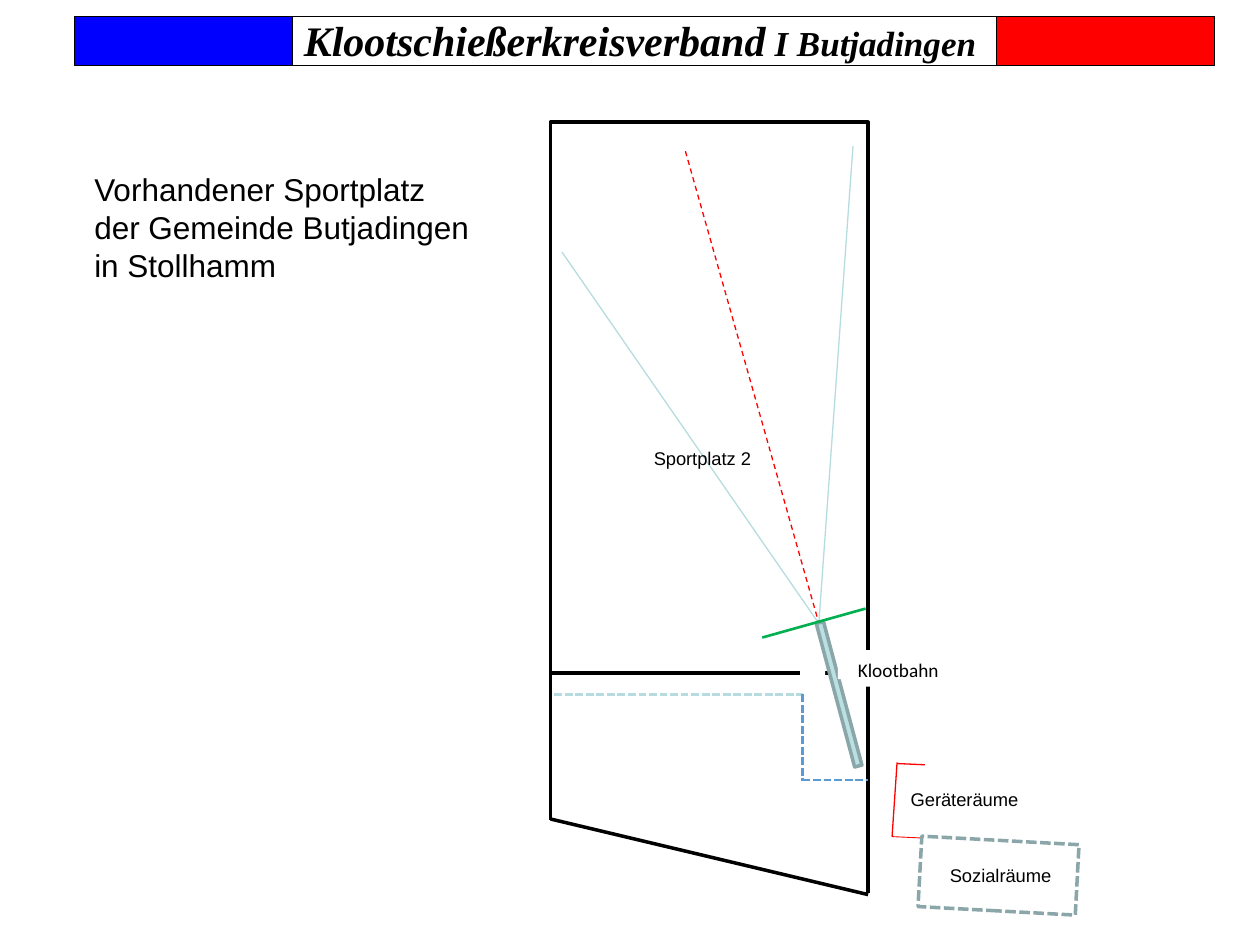
"""Build the slide showing the Stollhamm sports ground with its throwing track."""
from lxml import etree
from pptx import Presentation
from pptx.dml.color import RGBColor
from pptx.enum.dml import MSO_LINE
from pptx.enum.shapes import MSO_CONNECTOR, MSO_SHAPE
from pptx.enum.text import MSO_ANCHOR, MSO_AUTO_SIZE, PP_ALIGN
from pptx.oxml.ns import qn
from pptx.util import Inches, Pt

STRAIGHT = MSO_CONNECTOR.STRAIGHT
RECTANGLE = MSO_SHAPE.RECTANGLE
DASH = MSO_LINE.DASH
SHORT_DASH = MSO_LINE.SQUARE_DOT

COLORS = {
    "black": "000000", "white": "FFFFFF", "blue": "0000FF", "red": "FF0000",
    "sector": "B6DCDF", "track": "BBE0E3", "track_edge": "8AA6A8",
    "foul_line": "00B050", "path": "5B9BD5",
}


def add_line(start, end, color, width, dash=None):
    """Draw a straight line without shadow."""
    points = [Inches(value) for value in (*start, *end)]
    connector = slide.shapes.add_connector(STRAIGHT, *points)
    connector.line.color.rgb = RGBColor.from_string(COLORS[color])
    connector.line.width = Pt(width)
    if dash:
        connector.line.dash_style = dash
    etree.SubElement(connector._element.spPr, qn("a:effectLst"))


def add_rectangle(box, fill=None, line=None, width=0.75, rotation=0):
    """Draw a rectangle with optional fill and outline."""
    shape = slide.shapes.add_shape(RECTANGLE, *[Inches(value) for value in box])
    shape.shadow.inherit = False
    shape.rotation = rotation
    if fill:
        shape.fill.solid()
        shape.fill.fore_color.rgb = RGBColor.from_string(COLORS[fill])
    else:
        shape.fill.background()
    if line:
        shape.line.color.rgb = RGBColor.from_string(COLORS[line])
        shape.line.width = Pt(width)
    else:
        shape.line.fill.background()
    return shape


presentation = Presentation()
presentation.slide_width = Inches(10)
presentation.slide_height = Inches(7.5)
slide = presentation.slides.add_slide(presentation.slide_layouts[5])

title = slide.shapes.title
title_box = {"left": 0.59, "top": 0.13, "width": 8.98, "height": 0.44}
for name, value in title_box.items():
    setattr(title, name, Inches(value))
title.text_frame.auto_size = MSO_AUTO_SIZE.NONE
title.text_frame.vertical_anchor = MSO_ANCHOR.MIDDLE
paragraph = title.text_frame.paragraphs[0]
title_format = {"alignment": PP_ALIGN.CENTER, "line_spacing": 0.8, "space_before": Pt(4.8)}
for name, value in title_format.items():
    setattr(paragraph, name, value)
for text, size in (("Klootschießerkreisverband", 24), (" I Butjadingen", 20)):
    run = paragraph.add_run()
    run.text = text
    run_format = {"name": "Times New Roman", "size": Pt(size), "bold": True, "italic": True}
    for name, value in run_format.items():
        setattr(run.font, name, value)
    run.font.color.rgb = RGBColor.from_string(COLORS["black"])

for left, fill in ((0.59, "blue"), (7.91, "red")):
    add_rectangle((left, 0.13, 1.73, 0.39), fill, "black")
for y in (0.52, 0.13):
    add_line((2.32, y), (7.91, y), "black", 0.75)

add_line((6.89, 5.32), (6.89, 7.09), "black", 2)
add_line((4.37, 6.5), (6.89, 7.1), "black", 2)
add_line((6.5, 4.95), (4.46, 2), "sector", 0.75)
add_rectangle((4.37, 0.97, 2.52, 4.37), line="black", width=2)
add_line((4.37, 5.33), (4.37, 6.51), "black", 2)
add_line((5.44, 1.2), (6.5, 4.95), "red", 0.75, DASH)
add_rectangle((6.63, 4.92, 0.06, 1.18), "track", "track_edge", 2, 345)
add_line((6.5, 4.93), (6.77, 1.16), "sector", 0.75)
add_line((6.05, 5.06), (6.87, 4.83), "foul_line", 1.5)

for start, end, color in (
    ((4.4, 5.51), (6.37, 5.51), "sector"),
    ((6.37, 5.51), (6.37, 6.2), "path"),
    ((6.37, 6.19), (6.89, 6.19), "path"),
):
    add_line(start, end, color, 1.5, SHORT_DASH)

for gap in ((6.35, 5.32, 0.2, 0.07), (6.65, 5.28, 0.23, 0.11)):
    add_rectangle(gap, "white")
track_label = add_rectangle((6.71, 5.16, 1.04, 0.29), "white")
track_label.text_frame.vertical_anchor = MSO_ANCHOR.TOP
paragraph = track_label.text_frame.paragraphs[0]
paragraph.text = "Klootbahn"
label_format = {"alignment": PP_ALIGN.LEFT, "line_spacing": 1.07, "space_after": Pt(8)}
for name, value in label_format.items():
    setattr(paragraph, name, value)
for name, value in {"name": "Calibri", "size": Pt(11)}.items():
    setattr(paragraph.font, name, value)
paragraph.font.color.rgb = RGBColor.from_string(COLORS["black"])

for start, end, width in (
    ((7.12, 6.05), (7.08, 6.64), 0.75),
    ((7.12, 6.06), (7.34, 6.07), 0.75),
    ((7.08, 6.64), (7.3, 6.65), 0.5),
):
    add_line(start, end, "red", width)

social_rooms = add_rectangle((7.3, 6.67, 1.25, 0.56), None, "track_edge", 2, 3.1)
social_rooms.line.dash_style = SHORT_DASH

description = ("Vorhandener Sportplatz", "der Gemeinde Butjadingen", "in Stollhamm")
for box, lines, size in (
    ((0.65, 1.3, 3.2, 1.01), description, 18),
    ((5.09, 3.5, 0.99, 0.28), ("Sportplatz 2",), 10.5),
    ((7.13, 6.21, 1.07, 0.28), ("Geräteräume",), 10.5),
    ((7.44, 6.81, 1.02, 0.28), ("Sozialräume",), 10.5),
):
    label = slide.shapes.add_textbox(*[Inches(value) for value in box])
    label.text_frame.word_wrap = False
    label.text_frame.auto_size = MSO_AUTO_SIZE.SHAPE_TO_FIT_TEXT
    label.text_frame.text = "\n".join(lines)
    for paragraph in label.text_frame.paragraphs:
        for name, value in {"name": "Arial", "size": Pt(size)}.items():
            setattr(paragraph.font, name, value)
        paragraph.font.color.rgb = RGBColor.from_string(COLORS["black"])

presentation.save("out.pptx")
